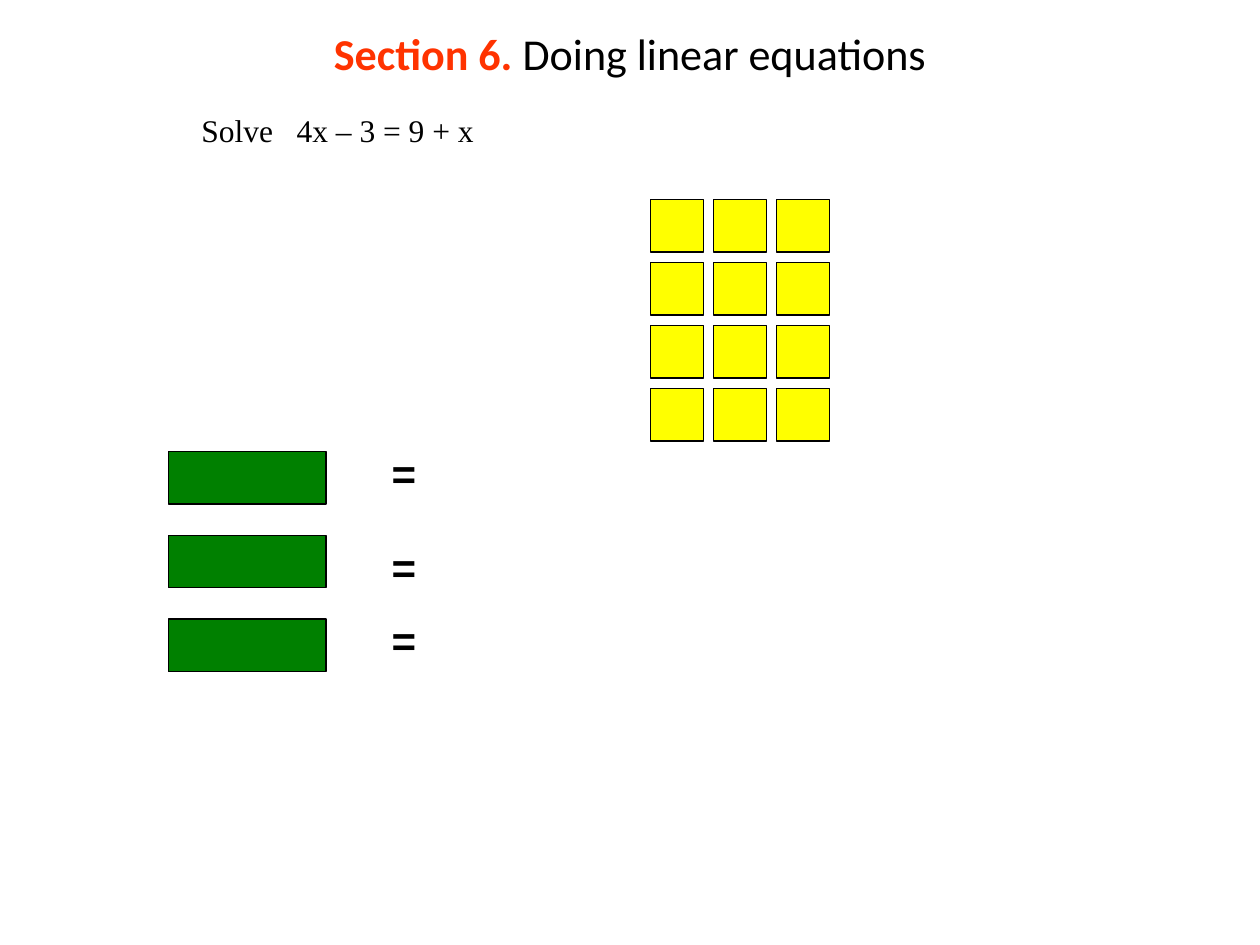
from dataclasses import dataclass
from typing import Any, Optional

from lxml import etree
from pptx import Presentation
from pptx import util as u
from pptx.dml.color import RGBColor
from pptx.enum import shapes, text
from pptx.oxml.ns import qn

BLACK = "000000"
SQUARE = 1.06  # side of a unit square and thickness of an x rod, in cm


@dataclass(frozen=True)
class Box:
    """Position and size in centimetres."""
    left: float
    top: float
    width: float
    height: float

    def lengths(self) -> list[u.Length]:
        return [u.Cm(value) for value in (self.left, self.top, self.width, self.height)]


@dataclass(frozen=True)
class Run:
    words: str
    font: dict[str, Any]
    color: str = BLACK


def hex_color(value: str) -> RGBColor:
    return RGBColor.from_string(value)


def set_values(target: Any, values: dict[str, Any]) -> None:
    for name, value in values.items():
        setattr(target, name, value)


def add_text(slide: Any, box: Box, runs: list[Run], frame: dict[str, Any],
             alignment: Optional[text.PP_ALIGN] = None) -> Any:
    shape = slide.shapes.add_textbox(*box.lengths())
    set_values(shape.text_frame, frame)
    paragraph = shape.text_frame.paragraphs[0]
    paragraph.alignment = alignment
    for item in runs:
        run = paragraph.add_run()
        run.text = item.words
        set_values(run.font, item.font)
        run.font.color.rgb = hex_color(item.color)
    return paragraph


def add_tab_stop(paragraph: Any, position: u.Length) -> None:
    tabs = etree.SubElement(paragraph._p.get_or_add_pPr(), qn("a:tabLst"))
    etree.SubElement(tabs, qn("a:tab"), pos=str(int(position)), algn="l")


def add_tile(container: Any, box: Box, fill: str, rotation: float = 0) -> None:
    shape = container.shapes.add_shape(shapes.MSO_SHAPE.RECTANGLE, *box.lengths())
    shape.rotation = rotation
    shape.shadow.inherit = False
    shape.fill.solid()
    shape.fill.fore_color.rgb = hex_color(fill)
    shape.line.color.rgb = hex_color(BLACK)
    shape.line.width = u.Pt(0.75)


def main() -> None:
    presentation = Presentation()
    presentation.slide_width, presentation.slide_height = u.Cm(25.4), u.Cm(19.05)
    slide = presentation.slides.add_slide(presentation.slide_layouts[6])

    # Title
    title_font = {"name": "Calibri", "size": u.Pt(25.2)}
    add_text(slide, Box(1.27, 0.28, 22.86, 1.57),
             [Run("Section 6.", {**title_font, "bold": True}, "FF3300"),
              Run(" Doing linear equations", {**title_font, "bold": False})],
             {"word_wrap": True, "vertical_anchor": text.MSO_ANCHOR.MIDDLE},
             text.PP_ALIGN.CENTER)

    # Equation to solve
    equation = add_text(slide, Box(3.81, 2.11, 15.67, 1.02),
                        [Run("Solve\t4x – 3 = 9 + x",
                             {"name": "Times New Roman", "size": u.Pt(18)})],
                        {"word_wrap": True})
    add_tab_stop(equation, u.Cm(1.92))

    # Equals signs
    sign = Run("=", {"name": "Arial", "size": u.Pt(24), "bold": True, "italic": True})
    for top in (8.89, 10.8, 12.27):
        add_text(slide, Box(7.62, top, 1.02, 1.27), [sign],
                 {"word_wrap": False}, text.PP_ALIGN.CENTER)

    # Green x rods, each an upright bar laid on its side
    for row in range(3):
        add_tile(slide, Box(4.45, 8.04 + row * 1.69, SQUARE, 3.18), "008000", rotation=90)

    # Yellow unit squares, the bottom row grouped
    rows, columns, pitch = 4, 3, 1.27
    for row in range(rows):
        container = slide.shapes.add_group_shape() if row == rows - 1 else slide
        for column in range(columns):
            add_tile(container, Box(13.12 + column * pitch, 4.02 + row * pitch,
                                    SQUARE, SQUARE), "FFFF00")

    presentation.save("out.pptx")


if __name__ == "__main__":
    main()
